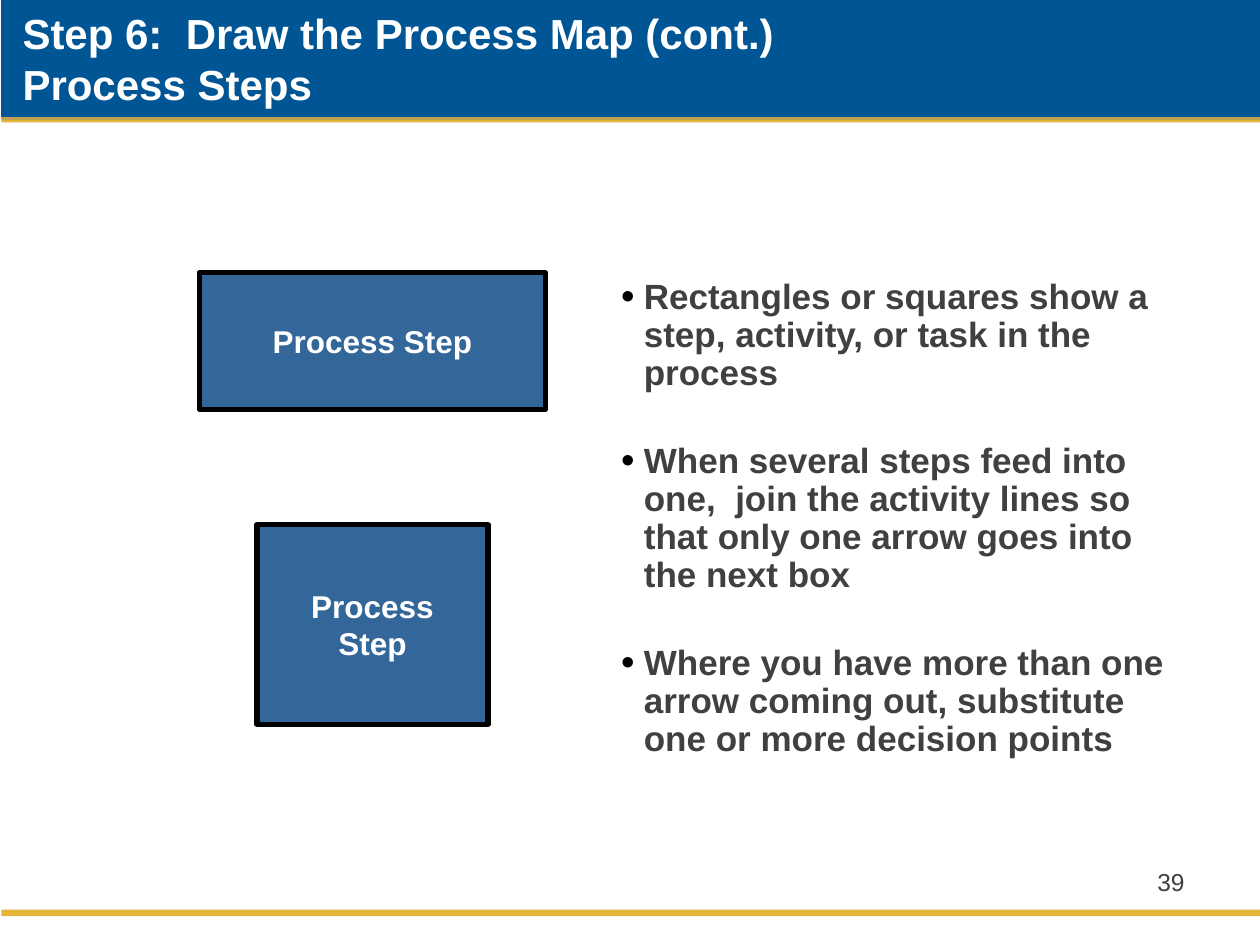
"""Build a slide on drawing the process steps of a process map."""
from lxml.etree import SubElement
from pptx import Presentation
from pptx.dml.color import RGBColor
from pptx.enum.shapes import MSO_SHAPE
from pptx.enum.text import MSO_ANCHOR, MSO_AUTO_SIZE, PP_ALIGN
from pptx.oxml.ns import qn
from pptx.util import Cm, Pt

COLORS = {
    "gold": "E5B53A",
    "banner": "005595",
    "step": "336699",
    "black": "000000",
    "white": "FFFFFF",
    "text": "404040",
    "shadow": "808080",
}
ADVICE = [
    "Rectangles or squares show a step, activity, or task in the process",
    "When several steps feed into one,  join the activity lines so "
    "that only one arrow goes into the next box",
    "Where you have more than one arrow coming out, substitute "
    "one or more decision points",
]


def rgb(name):
    return RGBColor.from_string(COLORS[name])


def add_run(paragraph, text, size, color, bold=True):
    run = paragraph.add_run()
    run.text = text
    run.font.name = "Arial"
    run.font.size = Pt(size)
    run.font.bold = bold
    run.font.color.rgb = rgb(color)


def add_rectangle(slide, left, top, width, height, fill, line=None, weight=0):
    rectangle = slide.shapes.add_shape(
        MSO_SHAPE.RECTANGLE, Cm(left), Cm(top), Cm(width), Cm(height))
    rectangle.shadow.inherit = False
    rectangle.fill.solid()
    rectangle.fill.fore_color.rgb = rgb(fill)
    if line:
        rectangle.line.color.rgb = rgb(line)
        rectangle.line.width = Pt(weight)
    else:
        rectangle.line.fill.background()
    return rectangle


def add_banner(slide):
    banner = add_rectangle(slide, 0.03, 0, 25.4, 2.34, "banner", "banner", 0.75)
    effects = banner._element.spPr.find(qn("a:effectLst"))
    shadow = SubElement(effects, qn("a:outerShdw"), dist=str(Pt(1.8)),
                        dir="5400000", rotWithShape="0")
    tint = SubElement(shadow, qn("a:srgbClr"), val=COLORS["shadow"])
    SubElement(tint, qn("a:alpha"), val="35000")


def add_step(slide, left, top, width, height):
    step = add_rectangle(slide, left, top, width, height, "step", "black", 3)
    frame = step.text_frame
    frame.word_wrap = True
    frame.margin_left = frame.margin_right = Cm(0.5)
    frame.vertical_anchor = MSO_ANCHOR.MIDDLE
    frame.paragraphs[0].alignment = PP_ALIGN.CENTER
    add_run(frame.paragraphs[0], "Process Step", 18, "white")


def add_textbox(slide, left, top, width, height):
    box = slide.shapes.add_textbox(Cm(left), Cm(top), Cm(width), Cm(height))
    box.text_frame.word_wrap = True
    return box.text_frame


def add_bullet(paragraph):
    properties = paragraph._p.get_or_add_pPr()
    properties.set("marL", str(Cm(0.46)))
    properties.set("indent", str(-Cm(0.46)))
    bullet_color = SubElement(properties, qn("a:buClr"))
    SubElement(bullet_color, qn("a:srgbClr"), val=COLORS["black"])
    SubElement(properties, qn("a:buSzPct"), val="110000")
    SubElement(properties, qn("a:buFont"), typeface="Arial")
    SubElement(properties, qn("a:buChar"), char="•")


def add_advice(slide):
    frame = add_textbox(slide, 12.27, 5.51, 11.73, 9.73)
    for index, advice in enumerate(ADVICE):
        paragraph = frame.add_paragraph() if index else frame.paragraphs[0]
        add_bullet(paragraph)
        paragraph.line_spacing = 0.9
        if index:
            paragraph.space_before = Pt(29)
        add_run(paragraph, advice, 20, "text")


def set_title(slide):
    title = slide.shapes.title
    title.left, title.top = Cm(0.2), Cm(0)
    title.width, title.height = Cm(21.59), Cm(2.34)
    frame = title.text_frame
    frame.word_wrap = True
    frame.auto_size = MSO_AUTO_SIZE.NONE
    frame.vertical_anchor = MSO_ANCHOR.MIDDLE
    heading = frame.paragraphs[0]
    heading.alignment = PP_ALIGN.LEFT
    add_run(heading, "Step 6:  Draw the Process Map (cont.)", 24, "white")
    heading.add_line_break()
    add_run(heading, "Process Steps", 24, "white")
    slide.shapes._spTree.append(title._element)


def add_page_number(slide):
    number = add_textbox(slide, 18.2, 17.35, 5.93, 1.32).paragraphs[0]
    number.alignment = PP_ALIGN.RIGHT
    add_run(number, "39", 14, "text", bold=False)


def main():
    deck = Presentation()
    deck.slide_width, deck.slide_height = Cm(25.4), Cm(19.05)
    slide = deck.slides.add_slide(deck.slide_layouts[5])
    for rule_top in (18.34, 2.34):
        add_rectangle(slide, 0.03, rule_top, 25.4, 0.13, "gold")
    add_banner(slide)
    set_title(slide)
    add_step(slide, 4.02, 5.5, 6.98, 2.75)
    add_step(slide, 5.18, 10.58, 4.66, 4.02)
    add_advice(slide)
    add_page_number(slide)
    deck.save("out.pptx")


if __name__ == "__main__":
    main()
